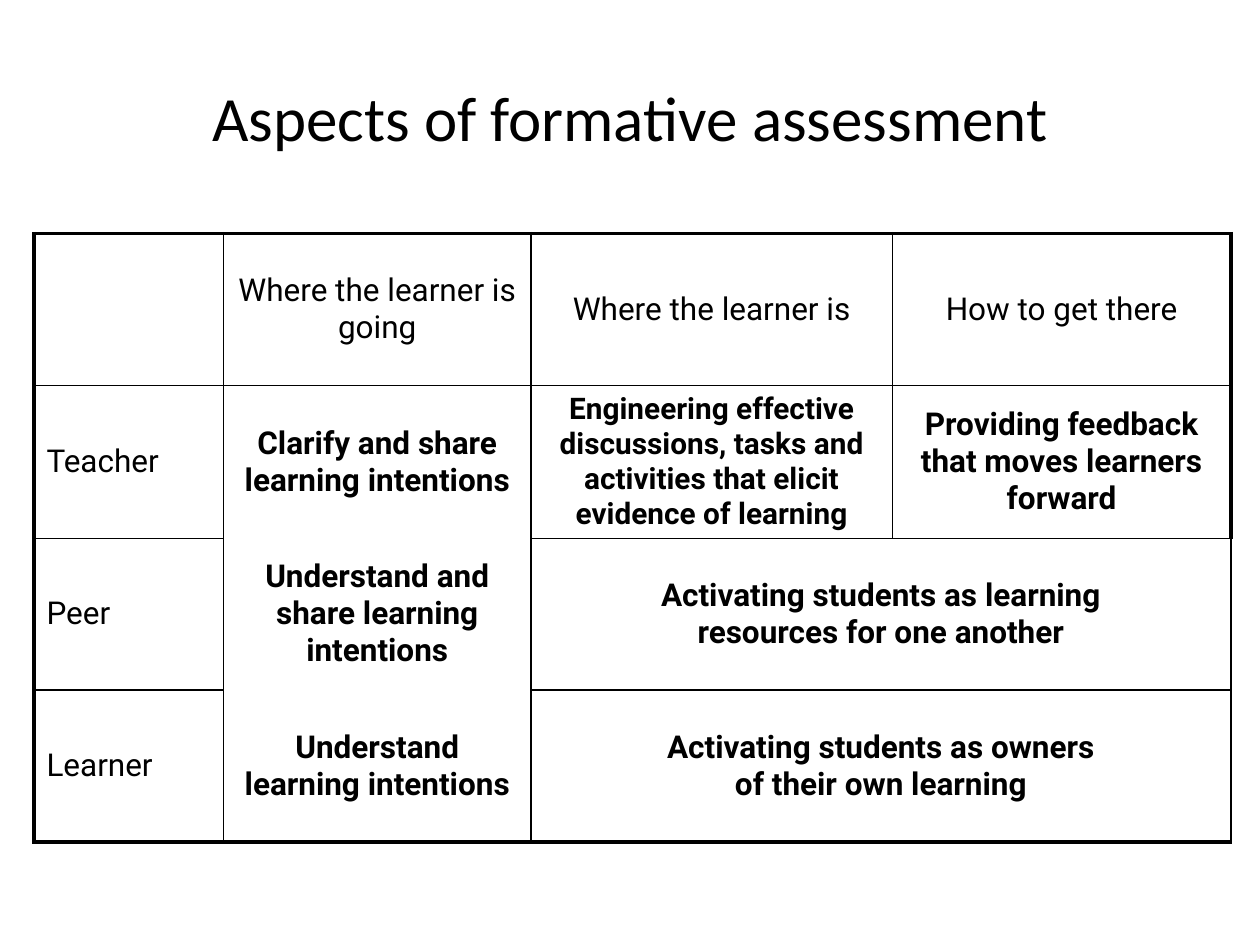
"""Build a slide with a table of the aspects of formative assessment."""
from lxml.etree import SubElement
from pptx import Presentation
from pptx.dml.color import RGBColor
from pptx.enum.text import MSO_ANCHOR as Anchor, PP_ALIGN as Align
from pptx.oxml.ns import qn
from pptx.util import Pt

BLACK = RGBColor(0, 0, 0)
WHITE = RGBColor(255, 255, 255)
THIN, THICK = 1, 2.25
COLUMN_WIDTHS = [108.4, 175.6, 206.6, 193.4]
ROW_HEIGHT = 86.8
INTENTIONS = 1
ASPECTS = [
    ["", "Where the learner is going", "Where the learner is", "How to get there"],
    ["Teacher", "Clarify and share learning intentions",
     "Engineering effective discussions, tasks and activities that elicit evidence of learning",
     "Providing feedback that moves learners forward"],
    ["Peer", "Understand and share learning intentions",
     "Activating students as learning\nresources for one another", None],
    ["Learner", "Understand learning intentions",
     "Activating students as owners\vof their own learning", None],
]


def write(frame, text, font="Roboto", size=18, bold=False, align=Align.CENTER):
    frame.text = text
    frame.word_wrap = True
    for paragraph in frame.paragraphs:
        paragraph.alignment = align
        for run in paragraph.runs:
            run.font.name = font
            run.font.size = Pt(size)
            run.font.bold = bold
            run.font.color.rgb = BLACK


class AspectSlide:
    def __init__(self, deck):
        self.line_color = BLACK
        self.fill_color = WHITE
        self.slide = deck.slides.add_slide(deck.slide_layouts[5])

    def title(self, text, left, top, width, height):
        heading = self.slide.shapes.title
        heading.left, heading.top = Pt(left), Pt(top)
        heading.width, heading.height = Pt(width), Pt(height)
        heading.text_frame.vertical_anchor = Anchor.MIDDLE
        write(heading.text_frame, text, font="Calibri", size=36)

    def borders(self, cell, widths):
        properties = cell._tc.get_or_add_tcPr()
        for position, (side, width) in enumerate(widths.items()):
            line = SubElement(properties, qn(f"a:ln{side}"), w=str(Pt(width)))
            if width:
                paint = SubElement(line, qn("a:solidFill"))
                SubElement(paint, qn("a:srgbClr"), val=str(self.line_color))
            else:
                SubElement(line, qn("a:noFill"))
            properties.insert(position, line)

    def table(self, rows, left, top):
        last_row, last_column = len(rows) - 1, len(COLUMN_WIDTHS) - 1
        grid = self.slide.shapes.add_table(
            len(rows), len(COLUMN_WIDTHS), Pt(left), Pt(top),
            Pt(sum(COLUMN_WIDTHS)), Pt(ROW_HEIGHT * len(rows))).table
        grid.first_row = grid.horz_banding = False
        for column, width in zip(grid.columns, COLUMN_WIDTHS):
            column.width = Pt(width)
        for r, row in enumerate(rows):
            grid.rows[r].height = Pt(ROW_HEIGHT)
            for c, text in enumerate(row):
                cell = grid.cell(r, c)
                cell.fill.solid()
                cell.fill.fore_color.rgb = self.fill_color
                cell.vertical_anchor = Anchor.MIDDLE
                inner = 0 if c == INTENTIONS else THIN
                self.borders(cell, {
                    "L": THICK if c == 0 else THIN,
                    "R": THICK if c == last_column else THIN,
                    "T": THICK if r == 0 else inner if r > 1 else THIN,
                    "B": THICK if r == last_row else inner if r > 0 else THIN})
                if text is None:
                    grid.cell(r, c - 1).merge(cell)
                elif text:
                    write(cell.text_frame, text, bold=r > 0 and c > 0,
                          size=17 if (r, c) == (1, 2) else 18,
                          align=Align.CENTER if c else Align.LEFT)


def main():
    deck = Presentation()
    deck.slide_width, deck.slide_height = Pt(720), Pt(540)
    page = AspectSlide(deck)
    page.title("Aspects of formative assessment", 36, 21.6, 648, 90)
    page.table(ASPECTS, 19.4, 133.4)
    deck.save("out.pptx")


if __name__ == "__main__":
    main()
